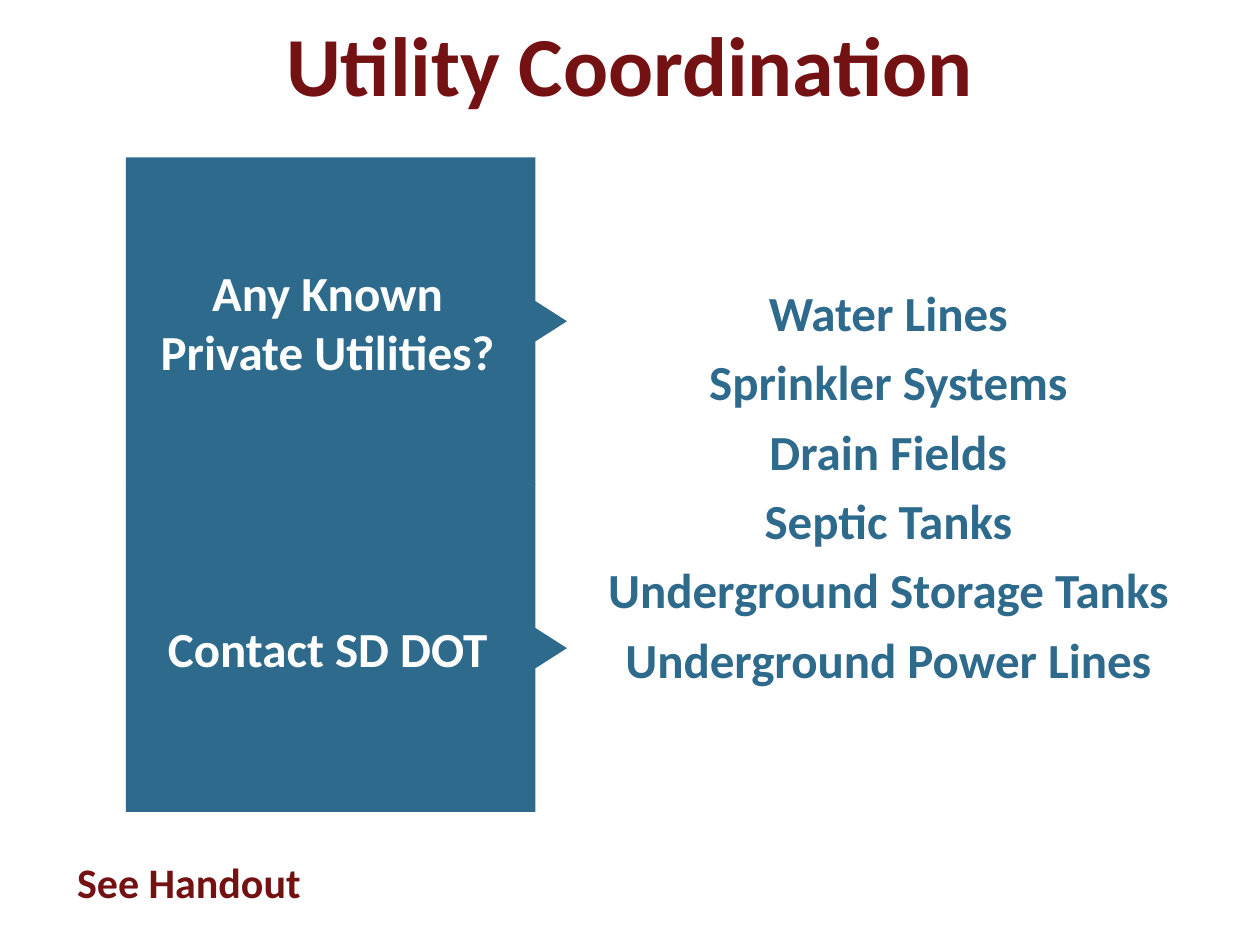
import pptx
import pptx.dml.color
import pptx.enum.text
import pptx.util
from dataclasses import dataclass
from pptx.enum.text import MSO_ANCHOR, MSO_AUTO_SIZE, PP_ALIGN
from pptx.util import Pt


@dataclass(frozen=True)
class Theme:
    font: str = "Calibri"
    maroon: str = "741112"
    blue: str = "2E6A8C"
    white: str = "FFFFFF"
    title_size: int = 48
    text_size: int = 28
    note_size: int = 24


theme = Theme()


def place(shape, left, top, width, height):
    shape.left, shape.top = Pt(left), Pt(top)
    shape.width, shape.height = Pt(width), Pt(height)


def write_lines(shape, lines, size, color, space_after=0):
    """Fill the shape with centred bold lines, without bullets."""
    frame = shape.text_frame
    frame.word_wrap = True
    frame.auto_size = MSO_AUTO_SIZE.NONE
    frame.vertical_anchor = MSO_ANCHOR.MIDDLE
    for index, line in enumerate(lines):
        paragraph = frame.add_paragraph() if index else frame.paragraphs[0]
        properties = paragraph._p.get_or_add_pPr()
        properties.set("marL", "0")
        properties.set("indent", "0")
        properties.append(pptx.oxml.xmlchemy.OxmlElement("a:buNone"))
        paragraph.alignment = PP_ALIGN.CENTER
        paragraph.space_before = Pt(0)
        paragraph.space_after = Pt(space_after)
        run = paragraph.add_run()
        run.text = line
        run.font.name = theme.font
        run.font.size = Pt(size)
        run.font.bold = True
        run.font.color.rgb = pptx.dml.color.RGBColor.from_string(color)


presentation = pptx.Presentation()
presentation.slide_width, presentation.slide_height = Pt(720), Pt(540)
slide = presentation.slides.add_slide(presentation.slide_layouts[1])

title = slide.shapes.title
place(title, 36, 0, 648, 72)
write_lines(title, ["Utility Coordination"], theme.title_size, theme.maroon)

utilities = slide.placeholders[1]
place(utilities, 324, 90, 367.2, 374.4)
write_lines(
    utilities,
    ["Water Lines", "Sprinkler Systems", "Drain Fields", "Septic Tanks",
     "Underground Storage Tanks", "Underground Power Lines"],
    theme.text_size, theme.blue, space_after=6,
)
frame = utilities.text_frame
frame.margin_left = frame.margin_right = Pt(7.2)
frame.margin_top = frame.margin_bottom = Pt(7.2)

note = slide.shapes.add_textbox(Pt(36), Pt(486), Pt(144), Pt(36))
write_lines(note, ["See Handout"], theme.note_size, theme.maroon)

# Two stacked panels, each with a small arrow on its right side
panel_left, panel_right, arrow_tip = 72, 306, 324
panel_height, panel_pitch, arrow_half = 187.2, 186.8, 11.5
label_width = 230.4
panels = [("Any Known Private Utilities?", 82), ("Contact SD DOT", 48)]

for index, (label, label_height) in enumerate(panels):
    top = 90 + index * panel_pitch
    bottom = top + panel_height
    middle = top + panel_height / 2
    group = slide.shapes.add_group_shape()

    builder = group.shapes.build_freeform(Pt(arrow_tip), Pt(middle))
    outline = [
        (panel_right, middle - arrow_half), (panel_right, top),
        (panel_left, top), (panel_left, bottom),
        (panel_right, bottom), (panel_right, middle + arrow_half),
    ]
    builder.add_line_segments([(Pt(x), Pt(y)) for x, y in outline], close=True)
    panel = builder.convert_to_shape()
    panel.shadow.inherit = False
    panel.fill.solid()
    panel.fill.fore_color.rgb = pptx.dml.color.RGBColor.from_string(theme.blue)
    panel.line.fill.background()

    caption = group.shapes.add_textbox(
        Pt(panel_left), Pt(middle - label_height / 2), Pt(label_width), Pt(label_height))
    write_lines(caption, [label], theme.text_size, theme.white)

presentation.save("out.pptx")
